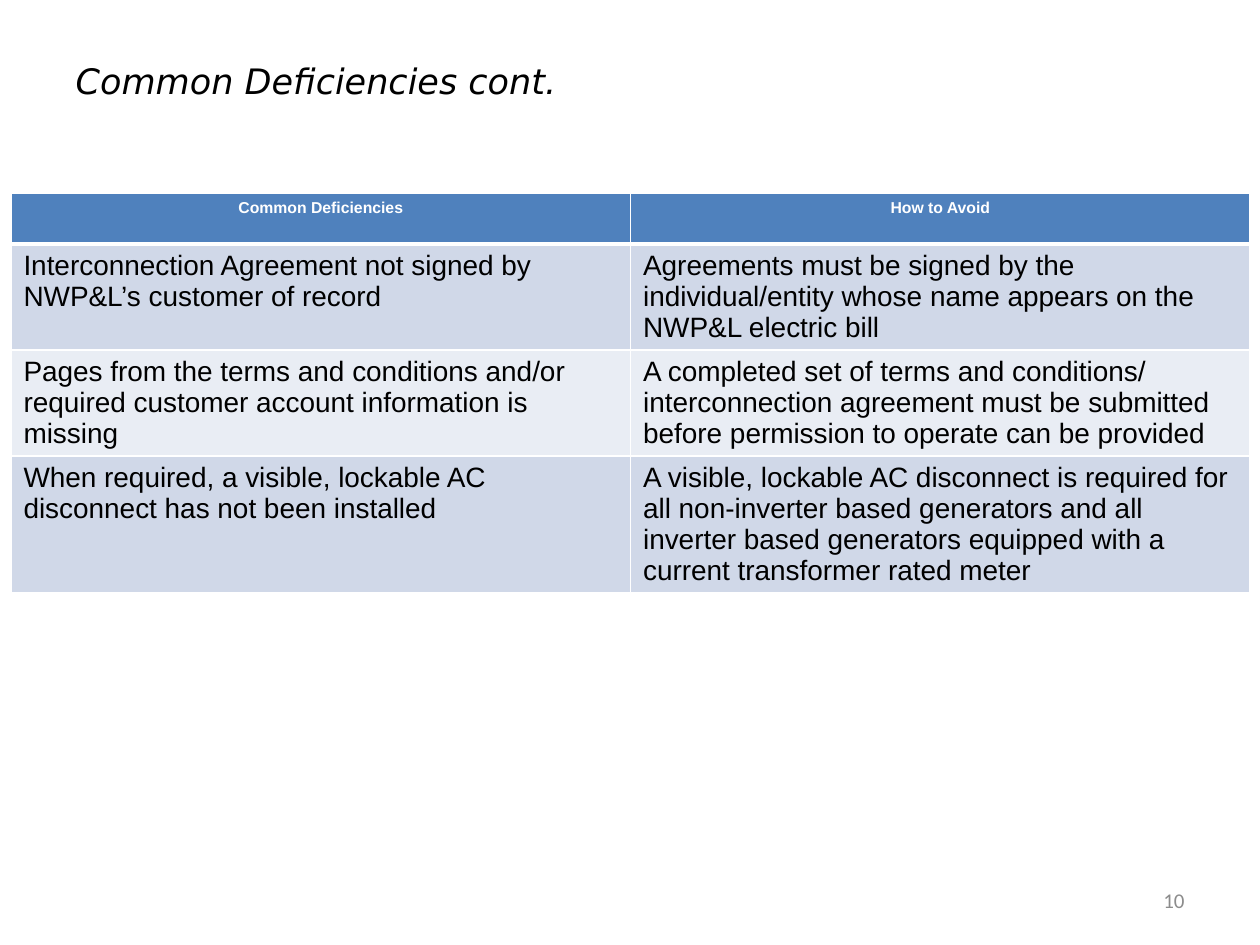
from lxml import etree
from pptx import Presentation
from pptx.dml.color import RGBColor
from pptx.enum.text import MSO_ANCHOR, PP_ALIGN
from pptx.oxml.ns import qn
from pptx.util import Cm, Pt

LEFT, CENTER, RIGHT = PP_ALIGN.LEFT, PP_ALIGN.CENTER, PP_ALIGN.RIGHT
MIDDLE = MSO_ANCHOR.MIDDLE
TITLE_ONLY = 5

HEADERS = ["Common Deficiencies", "How to Avoid"]
ROWS = [
    ["Interconnection Agreement not signed by NWP&L’s customer of record",
     "Agreements must be signed by the individual/entity whose name appears "
     "on the NWP&L electric bill"],
    ["Pages from the terms and conditions and/or required customer account "
     "information is missing",
     "A completed set of terms and conditions/ interconnection agreement must "
     "be submitted before permission to operate can be provided"],
    ["When required, a visible, lockable AC disconnect has not been installed",
     "A visible, lockable AC disconnect is required for all non-inverter based "
     "generators and all inverter based generators equipped with a current "
     "transformer rated meter"],
]


def rgb(value):
    return RGBColor.from_string(value)


class SlideBuilder:
    title_font, table_font, number_font = "DejaVu Sans", "Arial", "Calibri"
    black, white, grey = "000000", "FFFFFF", "8C8C8C"
    header_fill = "4F81BD"
    bands = ["D0D8E8", "E9EDF4"]

    def __init__(self, slide):
        self.slide = slide

    def add_text(self, tf, text, font, size, color, align=LEFT, bold=False, italic=False):
        tf.word_wrap = True
        p = tf.paragraphs[0]
        p.alignment = align
        r = p.add_run()
        r.text = text
        r.font.name = font
        r.font.size = Pt(size)
        r.font.bold = bold
        r.font.italic = italic
        r.font.color.rgb = rgb(color)

    def title(self, text, left, top, width, height):
        sp = self.slide.shapes.title
        sp.left, sp.top, sp.width, sp.height = Cm(left), Cm(top), Cm(width), Cm(height)
        sp.text_frame.vertical_anchor = MIDDLE
        self.add_text(sp.text_frame, text, self.title_font, 20, self.black, italic=True)

    def number(self, text, left, top, width, height):
        sp = self.slide.shapes.add_textbox(Cm(left), Cm(top), Cm(width), Cm(height))
        sp.text_frame.vertical_anchor = MIDDLE
        self.add_text(sp.text_frame, text, self.number_font, 12, self.grey, RIGHT)

    def borders(self, cell, bottom):
        tc_pr = cell._tc.get_or_add_tcPr()
        for side, width in (("L", 1), ("R", 1), ("T", 1), ("B", bottom)):
            ln = etree.SubElement(tc_pr, qn(f"a:ln{side}"), w=str(Pt(width)))
            fill = etree.SubElement(ln, qn("a:solidFill"))
            etree.SubElement(fill, qn("a:srgbClr"), val=self.white)

    def cell(self, cell, text, size, color, fill, bottom=1, **style):
        self.borders(cell, bottom)
        cell.fill.solid()
        cell.fill.fore_color.rgb = rgb(fill)
        self.add_text(cell.text_frame, text, self.table_font, size, color, **style)

    def table(self, headers, rows, left, top, col_width, row_height):
        n_rows, n_cols = len(rows) + 1, len(headers)
        table = self.slide.shapes.add_table(
            n_rows, n_cols, Cm(left), Cm(top),
            Cm(col_width * n_cols), Cm(row_height * n_rows)).table
        for c, text in enumerate(headers):
            self.cell(table.cell(0, c), text, 9, self.white, self.header_fill,
                      bottom=3, align=CENTER, bold=True)
        for i, row in enumerate(rows):
            for c, text in enumerate(row):
                self.cell(table.cell(i + 1, c), text, 16, self.black,
                          self.bands[i % 2])


def main():
    prs = Presentation()
    prs.slide_width, prs.slide_height = Cm(25.4), Cm(19.05)
    s = SlideBuilder(prs.slides.add_slide(prs.slide_layouts[TITLE_ONLY]))
    s.title("Common Deficiencies cont.", 1.27, 0.84, 16.51, 1.57)
    s.table(HEADERS, ROWS, 0.22, 3.89, 12.49, 1.03)
    s.number("10", 18.2, 17.65, 5.93, 1.01)
    prs.save("out.pptx")


if __name__ == "__main__":
    main()
